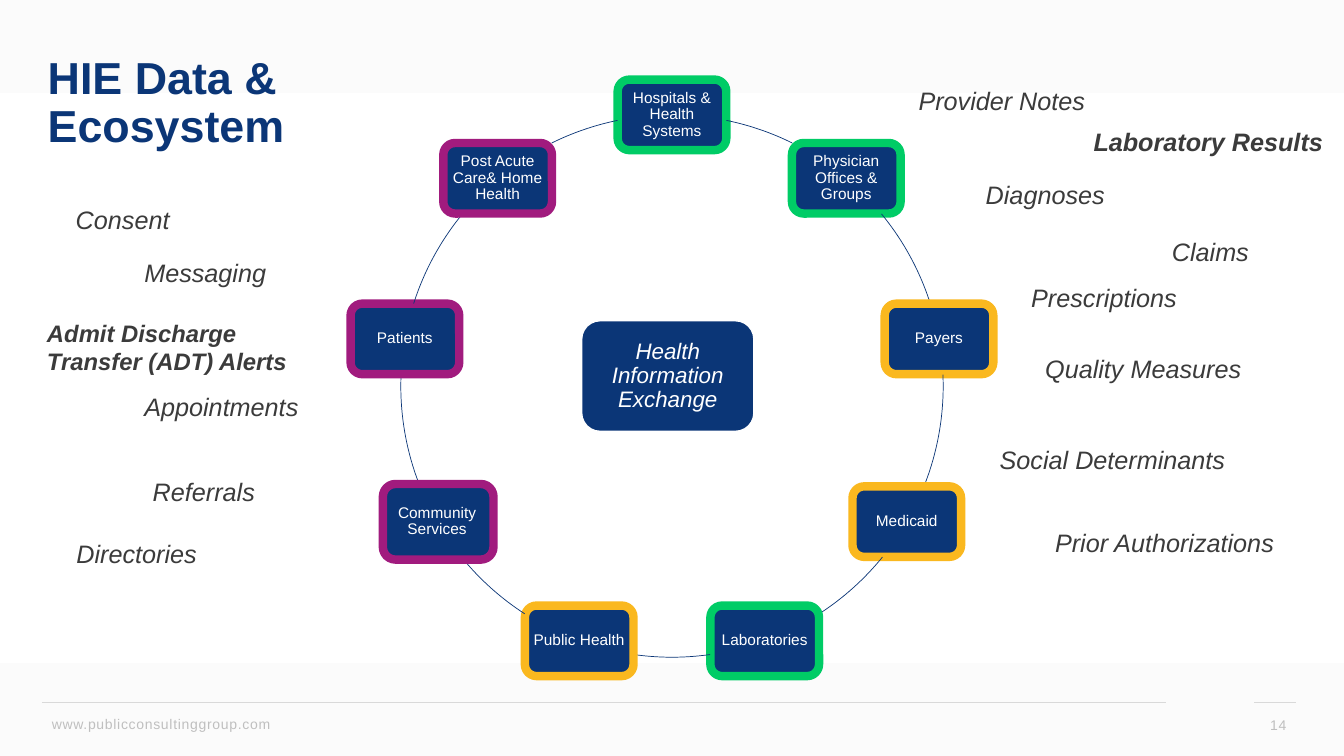
from math import cos, radians, sin

from lxml.etree import SubElement
from pptx import Presentation
from pptx.dml.color import RGBColor
from pptx.enum.shapes import MSO_CONNECTOR, MSO_SHAPE
from pptx.enum.text import MSO_ANCHOR, PP_ALIGN
from pptx.oxml.ns import qn
from pptx.util import Pt

COLOURS = {
    "navy": "0B3677", "green": "00CC66", "amber": "FAB81F", "purple": "A11B7E",
    "white": "FFFFFF", "haze": "FBFBFB", "rule": "D9D9D9", "footer": "BFBFBF",
    "label": "3B3B3B",
}
PAGE_WIDTH, PAGE_HEIGHT = 960, 540
CENTRE_X, CENTRE_Y, RADIUS = 480, 275.75, 193.7
NODE_WIDTH, NODE_HEIGHT = 77.6, 50.4
BORDER = 6

# Clockwise from the top
NODES = [
    ("Hospitals & Health Systems", "green"),
    ("Physician Offices & Groups", "green"),
    ("Payers", "amber"),
    ("Medicaid", "amber"),
    ("Laboratories", "green"),
    ("Public Health", "amber"),
    ("Community Services", None),
    ("Patients", "purple"),
    ("Post Acute Care& Home Health", "purple"),
]
STEP = 360 / len(NODES)

PLAIN = {"size": Pt(18), "italic": True}
STRONG = {**PLAIN, "bold": True}
LABELS = [
    ("Claims", 830, 165, 78, PLAIN),
    ("Provider Notes", 649, 57.5, 142, PLAIN),
    ("Diagnoses", 697, 124.5, 104.5, PLAIN),
    ("Prescriptions", 729.5, 198, 126, PLAIN),
    ("Admit Discharge Transfer (ADT) Alerts", 26.5, 224, 193.5,
     {**STRONG, "size": Pt(17)}),
    ("Quality Measures", 739.5, 248.5, 157, PLAIN),
    ("Social Determinants", 707, 314, 186.5, PLAIN),
    ("Directories", 47.5, 381, 186.5, PLAIN),
    ("Messaging", 96, 180, 186.5, PLAIN),
    ("Prior Authorizations", 746.5, 373, 186.5, PLAIN),
    ("Laboratory Results", 774, 86.5, 186.5, STRONG),
    ("Appointments", 96, 276, 186.5, PLAIN),
    ("Referrals", 102, 337, 186.5, PLAIN),
    ("Consent", 47, 142.5, 186.5, PLAIN),
]


def rgb(name):
    return RGBColor.from_string(COLOURS[name])


def write(frame, lines, colour, font, para_format=None):
    """Fill a text frame with one paragraph per line."""
    frame.word_wrap = True
    for index, line in enumerate(lines):
        para = frame.add_paragraph() if index else frame.paragraphs[0]
        for name, value in (para_format or {}).items():
            setattr(para, name, value)
        span = para.add_run()
        span.text = line
        for name, value in {"name": "Arial", **font}.items():
            setattr(span.font, name, value)
        span.font.color.rgb = rgb(colour)


def add_text(page, lines, place, colour, font, para_format=None):
    box = page.shapes.add_textbox(*map(Pt, place))
    write(box.text_frame, lines, colour, font, para_format)
    return box


def add_footer_text(page, text, place, alignment, anchor):
    box = add_text(page, [text], place, "footer", {"size": Pt(10)},
                   {"alignment": alignment})
    box.text_frame.vertical_anchor = anchor
    for span in box.text_frame.paragraphs[0].runs:
        span.font._element.set("spc", "50")


def add_rule(page, left, right):
    y = 502
    rule = page.shapes.add_connector(
        MSO_CONNECTOR.STRAIGHT, Pt(left), Pt(y), Pt(right), Pt(y))
    rule.line.color.rgb = rgb("rule")
    rule.line.width = Pt(0.5)
    SubElement(rule._element.spPr, qn("a:effectLst"))


def add_haze(page, top, rotation):
    """Soft grey band that fades from a page edge towards the middle."""
    band = page.shapes.add_shape(
        MSO_SHAPE.RECTANGLE, 0, Pt(top), Pt(PAGE_WIDTH), Pt(133))
    band.rotation = rotation
    band.shadow.inherit = False
    band.line.fill.background()
    band.fill.gradient()
    band.fill.gradient_angle = 270
    for stop, position, name in zip(
            band.fill.gradient_stops, (0, 1), ("haze", "white")):
        stop.position = position
        stop.color.rgb = rgb(name)


def add_outline(page, kind, centre, size, colour, weight):
    """Unfilled shape placed by its centre."""
    (x, y), (width, height) = centre, size
    shape = page.shapes.add_shape(
        kind, Pt(x - width / 2), Pt(y - height / 2), Pt(width), Pt(height))
    shape.shadow.inherit = False
    shape.fill.background()
    shape.line.color.rgb = rgb(colour)
    shape.line.width = Pt(weight)
    return shape


def add_card(page, text, centre, size, border, weight, font):
    card = add_outline(page, MSO_SHAPE.ROUNDED_RECTANGLE, centre, size,
                       border, weight)
    card.fill.solid()
    card.fill.fore_color.rgb = rgb("navy")
    frame = card.text_frame
    for side in ("left", "top", "right", "bottom"):
        setattr(frame, f"margin_{side}", Pt(3.6))
    frame.vertical_anchor = MSO_ANCHOR.MIDDLE
    write(frame, [text], "white", font,
          {"alignment": PP_ALIGN.CENTER, "line_spacing": 0.9})


def ring_point(angle):
    """Point on the ring, with the angle clockwise from the top."""
    turn = radians(angle)
    return CENTRE_X + RADIUS * sin(turn), CENTRE_Y - RADIUS * cos(turn)


def card_edge(angle, direction):
    """Angle at which the ring leaves the card centred at the given angle."""
    x, y = ring_point(angle)
    while True:
        angle += direction * 0.1
        ring_x, ring_y = ring_point(angle)
        if abs(ring_x - x) > NODE_WIDTH / 2 or abs(ring_y - y) > NODE_HEIGHT / 2:
            return angle


def add_arc(page, start, end):
    arc = add_outline(page, MSO_SHAPE.ARC, (CENTRE_X, CENTRE_Y),
                      (2 * RADIUS, 2 * RADIUS), "navy", 0.5)
    for index, angle in enumerate((start, end)):
        # Arc angles run from three o'clock, in units of 1/60000 degree
        arc.adjustments[index] = (angle - 90) % 360 * 0.6


def add_ring(page):
    for index, (name, border) in enumerate(NODES):
        angle = index * STEP
        add_card(page, name, ring_point(angle), (NODE_WIDTH, NODE_HEIGHT),
                 border or "white", BORDER if border else 1, {"size": Pt(11)})
        add_arc(page, card_edge(angle, 1), card_edge(angle + STEP, -1))


def main():
    deck = Presentation()
    deck.slide_width, deck.slide_height = Pt(PAGE_WIDTH), Pt(PAGE_HEIGHT)
    page = deck.slides.add_slide(deck.slide_layouts[6])

    add_haze(page, 0, 0)
    add_haze(page, PAGE_HEIGHT - 133, 180)
    add_footer_text(page, "www.publicconsultinggroup.com",
                    (30, 507.5, 279, 20), PP_ALIGN.LEFT, MSO_ANCHOR.TOP)
    add_rule(page, 30, 833)
    add_rule(page, 896, 926)
    add_footer_text(page, "14", (896, 503.5, 30, 29),
                    PP_ALIGN.RIGHT, MSO_ANCHOR.MIDDLE)

    add_ring(page)
    add_text(page, ["HIE Data &", "Ecosystem"], (27, 36, 357, 90), "navy",
             {"size": Pt(32), "bold": True}, {"line_spacing": 0.9})
    add_card(page, "Health Information Exchange", (477, 268.6), (123, 79),
             "white", 1, {"size": Pt(16), "italic": True})
    for text, left, top, width, font in LABELS:
        height = 48 if font["size"] < Pt(18) else 29
        add_text(page, [text], (left, top, width, height), "label", font)
    add_outline(page, MSO_SHAPE.ROUNDED_RECTANGLE, (313, 372.7), (79, 54),
                "purple", BORDER)
    deck.save("out.pptx")


if __name__ == "__main__":
    main()
